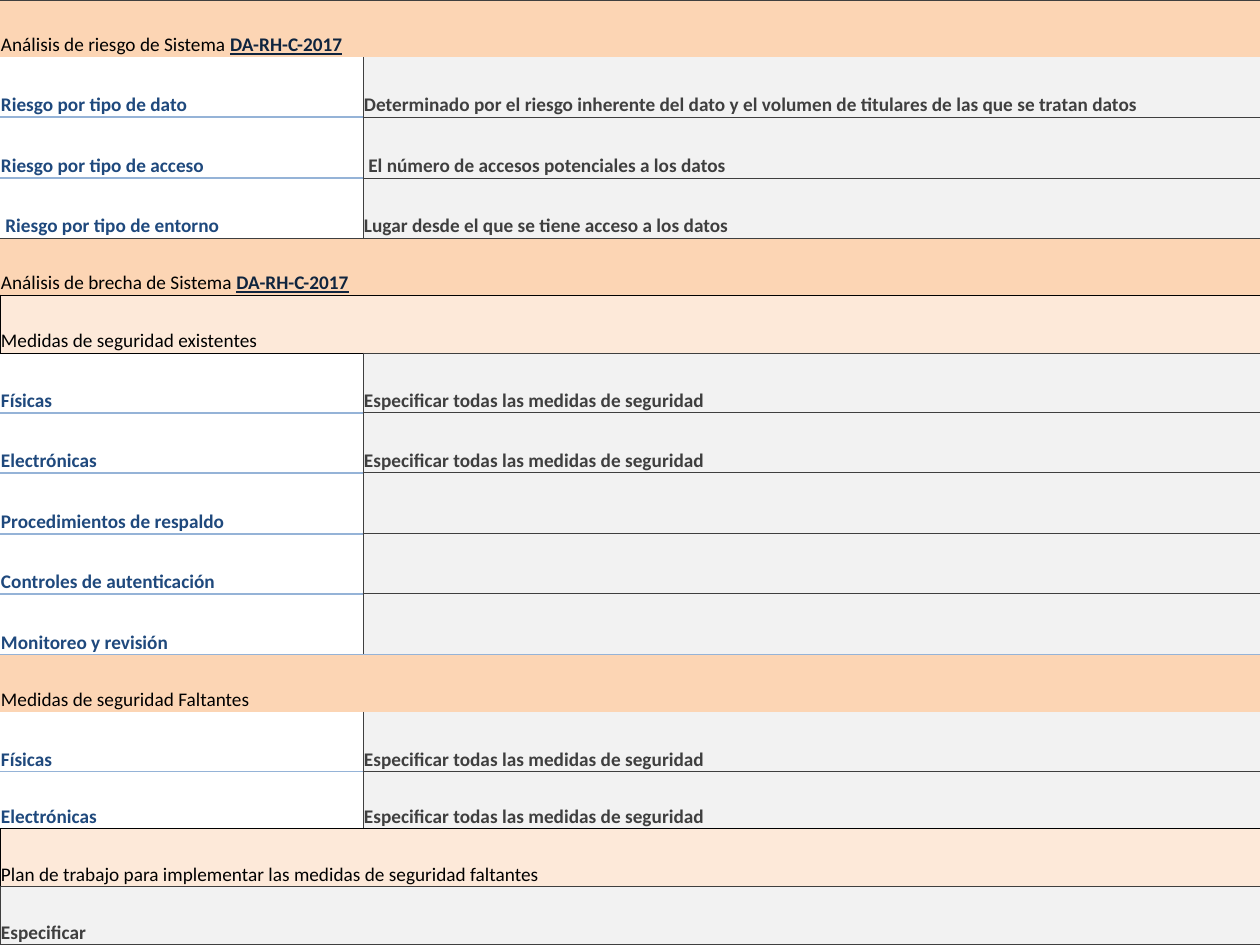
"""Build a one-slide risk and gap analysis table for a data system."""
from lxml.etree import SubElement
from pptx import Presentation
from pptx.dml.color import RGBColor as RGB
from pptx.enum.text import MSO_ANCHOR as ANCHOR
from pptx.oxml.ns import qn
from pptx.util import Pt

PX = 914400 // 126
COLORS = {"band": "FCD5B4", "box": "FDE9D9", "value": "F2F2F2", "label": "1F497D",
          "code": "0F243E", "dark": "3F3F3F", "black": "000000", "blue": "95B3D7"}
WIDTHS = {"dark": 0.5, "black": 0.5, "blue": 1}
CODE = "DA-RH-C-2017"
SPECIFY = "Especificar todas las medidas de seguridad"
ROWS = [
    ("band", 57, None, "Análisis de riesgo de Sistema ", CODE),
    ("label", 60, "blue", "Riesgo por tipo de dato",
     "Determinado por el riesgo inherente del dato y el volumen de titulares de las que se tratan datos"),
    ("label", 61, "blue", "Riesgo por tipo de acceso", " El número de accesos potenciales a los datos"),
    ("label", 60, "dark", " Riesgo por tipo de entorno", "Lugar desde el que se tiene acceso a los datos"),
    ("band", 57, "black", "Análisis de brecha de Sistema ", CODE),
    ("box", 58, "black", "Medidas de seguridad existentes", ""),
    ("label", 60, "blue", "Físicas", SPECIFY),
    ("label", 60, "blue", "Electrónicas", SPECIFY),
    ("label", 61, "blue", "Procedimientos de respaldo", ""),
    ("label", 60, "blue", "Controles de autenticación", ""),
    ("label", 61, "blue", "Monitoreo y revisión", ""),
    ("band", 57, None, "Medidas de seguridad Faltantes", ""),
    ("label", 60, "blue", "Físicas", SPECIFY),
    ("label", 57, "black", "Electrónicas", SPECIFY),
    ("box", 58, "dark", "Plan de trabajo para implementar las medidas de seguridad faltantes", ""),
    ("value", 58, "dark", "Especificar", ""),
]


def style_cell(cell, fill, left, right, top, bottom):
    cell.margin_left = cell.margin_right = cell.margin_top = PX
    cell.margin_bottom = 0
    cell.vertical_anchor = ANCHOR.BOTTOM
    tcPr = cell._tc.get_or_add_tcPr()
    for tag, color in (("a:lnL", left), ("a:lnR", right), ("a:lnT", top), ("a:lnB", bottom)):
        ln = SubElement(tcPr, qn(tag), w=str(Pt(WIDTHS.get(color, 0))))
        if color:
            SubElement(SubElement(ln, qn("a:solidFill")), qn("a:srgbClr"), val=COLORS[color])
        else:
            SubElement(ln, qn("a:noFill"))
    if fill:
        cell.fill.solid()
        cell.fill.fore_color.rgb = RGB.from_string(COLORS[fill])
    else:
        cell.fill.background()


def add_run(cell, text, color, bold=True, underline=False):
    p = cell.text_frame.paragraphs[0]
    p.font.size = Pt(11)
    if text:
        r = p.add_run()
        r.text = text
        r.font.name = "Calibri"
        r.font.size = Pt(11)
        r.font.bold = bold
        r.font.underline = underline
        r.font.color.rgb = RGB.from_string(COLORS[color])


prs = Presentation()
prs.slide_width = 1260 * PX
prs.slide_height = 945 * PX
s = prs.slides.add_slide(prs.slide_layouts[6])
table = s.shapes.add_table(len(ROWS), 2, 0, 0, 1260 * PX, 945 * PX).table
table.first_row = table.horz_banding = False
table.columns[0].width = 363 * PX
table.columns[1].width = 897 * PX

top = "dark"
for i, (kind, height, bottom, text, detail) in enumerate(ROWS):
    table.rows[i].height = height * PX
    first, second = table.cell(i, 0), table.cell(i, 1)
    if kind == "label":
        style_cell(first, None, None, "dark", top, bottom)
        style_cell(second, "value", "dark", "dark", top and "dark",
                   "dark" if bottom == "blue" else bottom)
        add_run(first, text, "label")
        add_run(second, detail, "dark")
    else:
        side = {"band": None, "box": "black", "value": "dark"}[kind]
        first.merge(second)
        style_cell(first, kind, side, side, top, bottom)
        style_cell(second, kind, None, side, top, bottom)
        add_run(first, text, "dark" if kind == "value" else "black", kind == "value")
        add_run(first, detail, "code", underline=True)
    top = bottom

prs.save("out.pptx")
